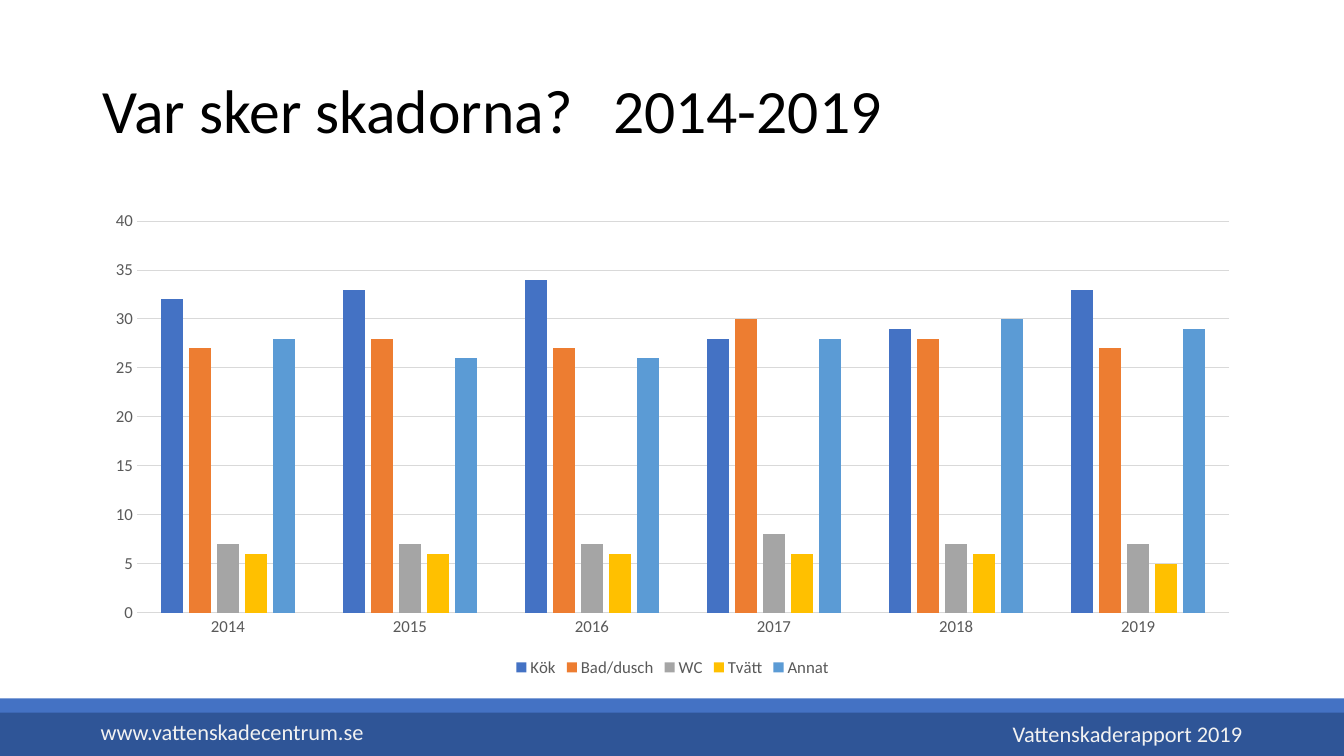
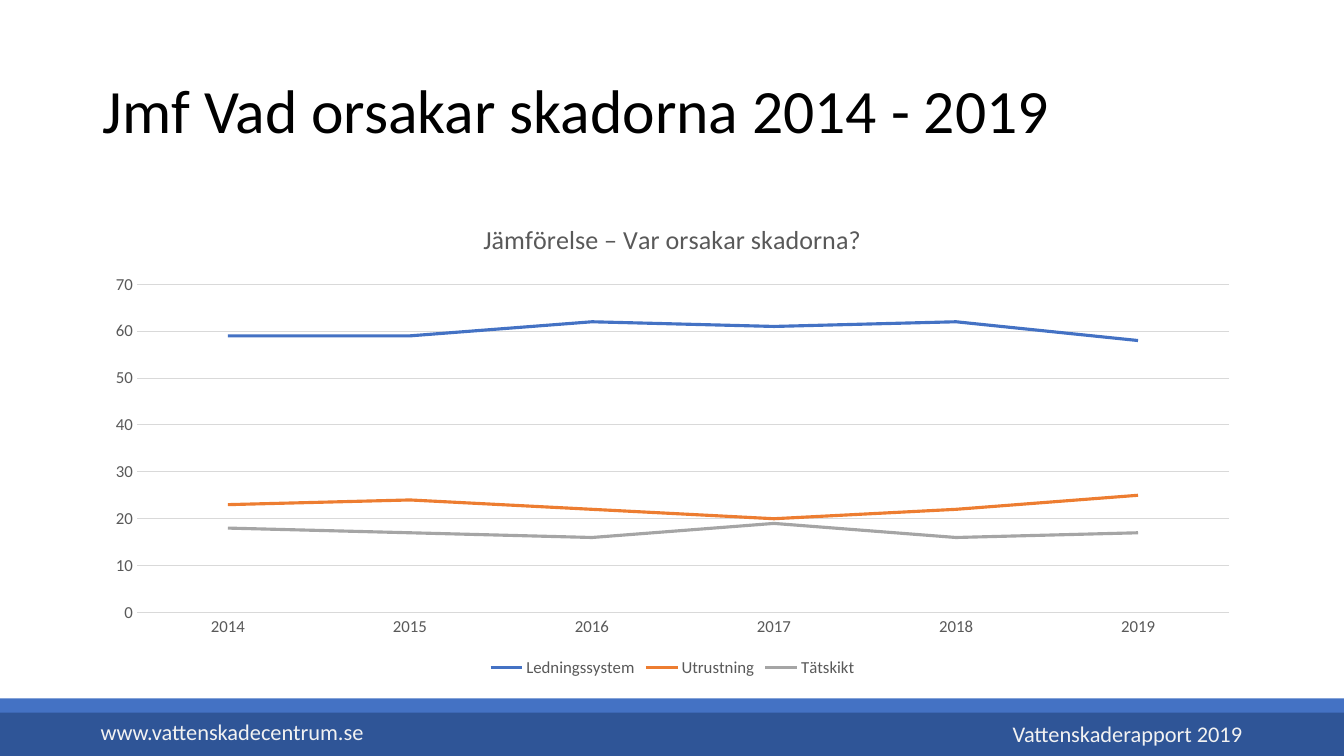
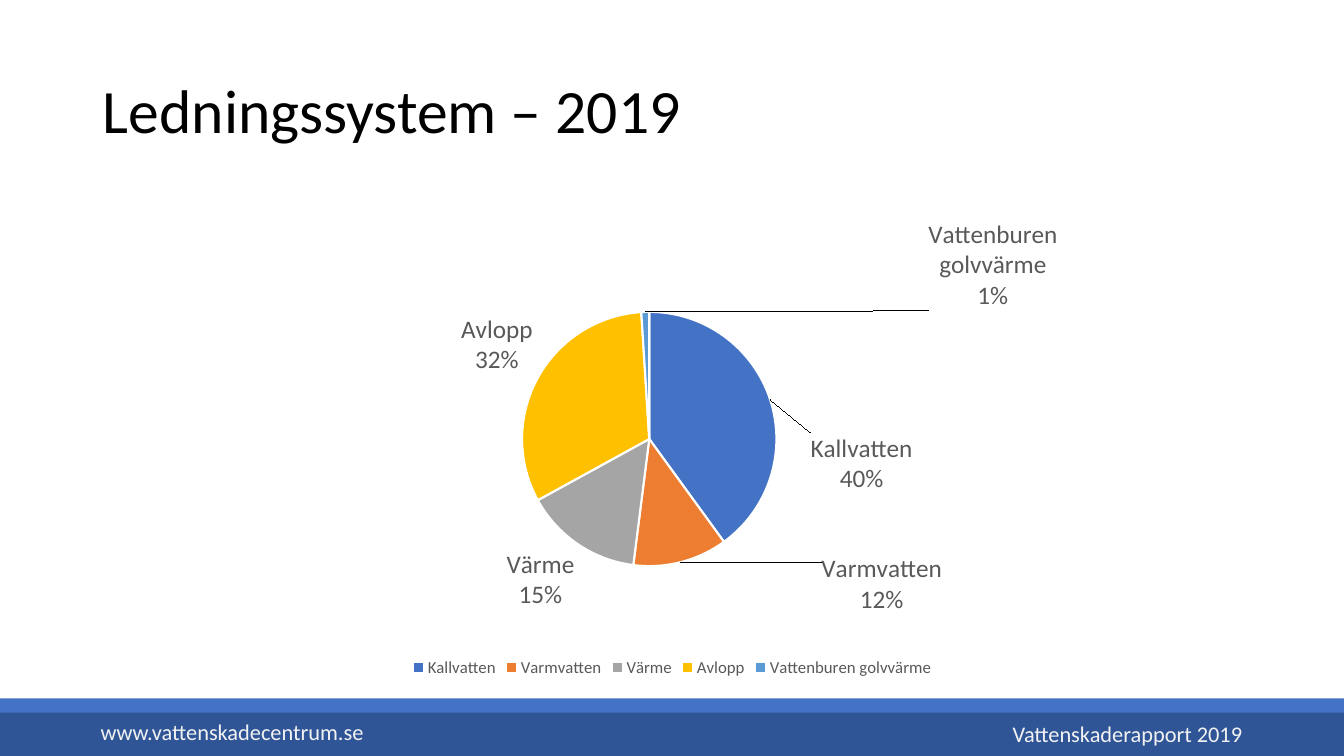
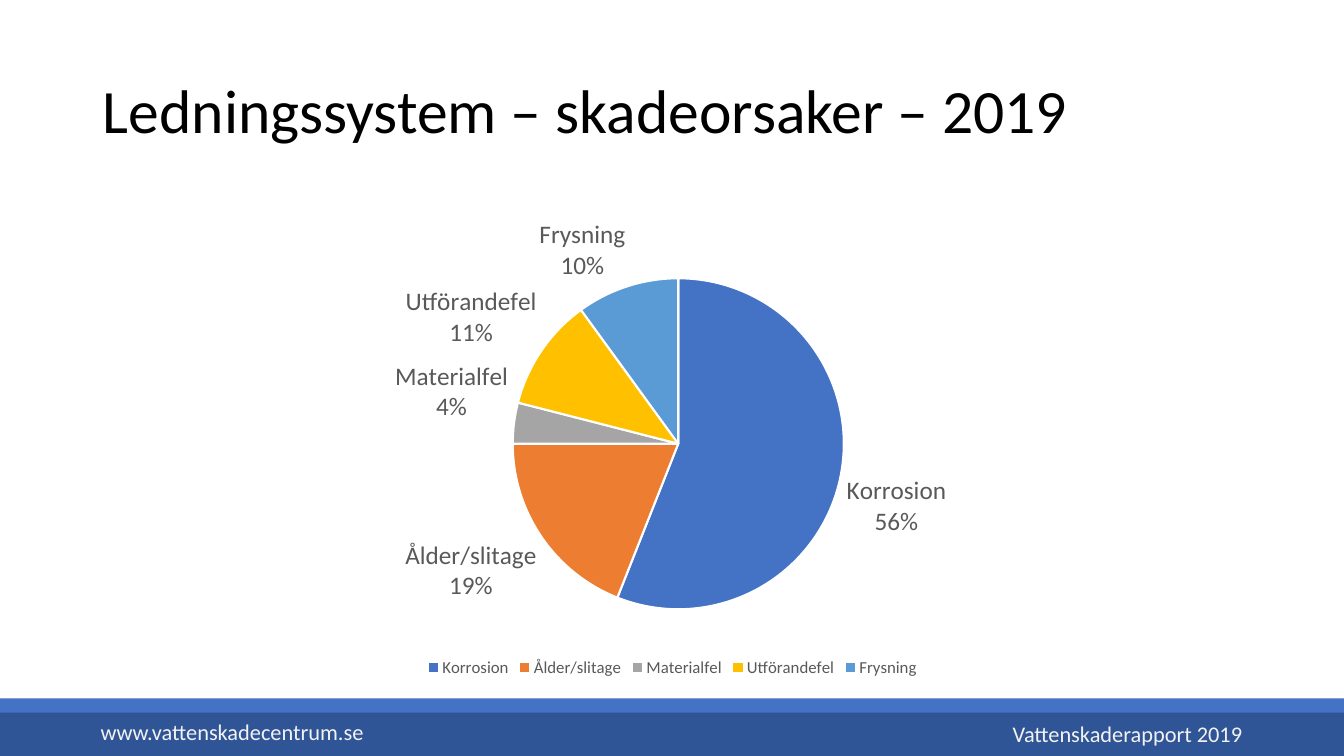
from copy import deepcopy

from lxml import etree
from pptx import Presentation
from pptx.chart.data import CategoryChartData
from pptx.dml.color import RGBColor
from pptx.enum.chart import XL_CHART_TYPE as ChartType
from pptx.enum.chart import XL_LABEL_POSITION as LabelPosition
from pptx.enum.chart import XL_LEGEND_POSITION as LegendPosition
from pptx.enum.chart import XL_TICK_MARK as TickMark
from pptx.enum.shapes import MSO_SHAPE as Shape
from pptx.enum.text import MSO_ANCHOR as Anchor
from pptx.enum.text import PP_ALIGN as Align
from pptx.oxml.ns import qn
from pptx.util import Inches, Pt

NAVY = RGBColor(0x2F, 0x55, 0x97)
BLUE = RGBColor(0x44, 0x72, 0xC4)
ORANGE = RGBColor(0xED, 0x7D, 0x31)
GREY = RGBColor(0xA5, 0xA5, 0xA5)
YELLOW = RGBColor(0xFF, 0xC0, 0x00)
SKY = RGBColor(0x5B, 0x9B, 0xD5)
BLACK = RGBColor(0, 0, 0)
WHITE = RGBColor(0xFF, 0xFF, 0xFF)
OFF_WHITE = RGBColor(0xF2, 0xF2, 0xF2)
TEXT_GREY = RGBColor(0x59, 0x59, 0x59)
GRID_GREY = RGBColor(0xD9, 0xD9, 0xD9)
PALETTE = [BLUE, ORANGE, GREY, YELLOW, SKY]

FONT = "Calibri"
WIDTH, HEIGHT = 13.33, 7.5
TITLE_BOX = (0.92, 0.4, 10.38, 1.45)
CHART_BOX = (0.92, 2, 11.5, 4.76)
TITLE_TAB = 5.06

BANDS = [((0, 7, WIDTH, 0.5), NAVY), ((0, 6.93, WIDTH, 0.14), BLUE)]
FOOTERS = [
    ("www.vattenskadecentrum.se", (0.9, 7.06, 2.83, 0.4), Align.LEFT),
    ("Vattenskaderapport 2019", (9.59, 7.08, 2.83, 0.4), Align.RIGHT),
]
YEARS = ["2014", "2015", "2016", "2017", "2018", "2019"]

# Pie plots are (x, y, width, height) and label moves (dx, dy), as shares of the chart.
SLIDES = [
    {
        "title": "Var sker skadorna?\t2014-2019",
        "type": ChartType.COLUMN_CLUSTERED,
        "categories": YEARS,
        "series": {
            "Kök": [32, 33, 34, 28, 29, 33],
            "Bad/dusch": [27, 28, 27, 30, 28, 27],
            "WC": [7, 7, 7, 8, 7, 7],
            "Tvätt": [6, 6, 6, 6, 6, 5],
            "Annat": [28, 26, 26, 28, 30, 29],
        },
    },
    {
        "title": "Jmf Vad orsakar skadorna 2014 - 2019",
        "type": ChartType.LINE,
        "chart_title": "Jämförelse – Var orsakar skadorna?",
        "categories": YEARS,
        "series": {
            "Ledningssystem": [59, 59, 62, 61, 62, 58],
            "Utrustning": [23, 24, 22, 20, 22, 25],
            "Tätskikt": [18, 17, 16, 19, 16, 17],
        },
    },
    {
        "title": "Ledningssystem – 2019",
        "type": ChartType.PIE,
        "categories": ["Kallvatten", "Varmvatten", "Värme", "Avlopp",
                       "Vattenburen golvvärme"],
        "series": {"Series 1": [40, 12, 15, 32, 1]},
        "plot": (0.37, 0.23, 0.22, 0.53),
        "label_moves": {0: (0.03, 0.2), 1: (0.12, -0.03), 4: (0.3, 0.01)},
    },
    {
        "title": "Ledningssystem – skadeorsaker – 2019",
        "type": ChartType.PIE,
        "categories": ["Korrosion", "Ålder/slitage", "Materialfel",
                       "Utförandefel", "Frysning"],
        "series": {"Series 1": [56, 19, 4, 11, 10]},
        "plot": (0.36, 0.16, 0.29, 0.69),
        "label_moves": {},
    },
]


def inches(box):
    return [Inches(value) for value in box]


def set_font(font, size, color):
    for name, value in {"name": FONT, "size": Pt(size)}.items():
        setattr(font, name, value)
    font.color.rgb = color


def manual_layout(values):
    """Return a c:layout element; values maps child tags to their val."""
    layout = etree.Element(qn("c:layout"))
    manual = etree.SubElement(layout, qn("c:manualLayout"))
    for tag, value in values.items():
        etree.SubElement(manual, qn("c:" + tag)).set("val", str(value))
    return layout


def add_shared_parts(slide, layout):
    """Draw bands and footers and move them to the layout."""
    shapes = []
    for box, color in BANDS:
        band = slide.shapes.add_shape(Shape.RECTANGLE, *inches(box))
        band.shadow.inherit = False
        band.fill.solid()
        band.fill.fore_color.rgb = color
        band.line.fill.background()
        shapes.append(band)
    for text, box, align in FOOTERS:
        footer = slide.shapes.add_textbox(*inches(box))
        frame = footer.text_frame
        frame.word_wrap = True
        frame.vertical_anchor = Anchor.MIDDLE
        frame.text = text
        paragraph = frame.paragraphs[0]
        paragraph.alignment = align
        set_font(paragraph.runs[0].font, 16, OFF_WHITE)
        shapes.append(footer)
    for shape in shapes:
        layout.shapes._spTree.append(shape._element)


def write_title(title, text):
    for name, value in zip(("left", "top", "width", "height"), inches(TITLE_BOX)):
        setattr(title, name, value)
    title.text_frame.text = text
    title.text_frame.vertical_anchor = Anchor.MIDDLE
    paragraph = title.text_frame.paragraphs[0]
    paragraph.alignment = Align.LEFT
    paragraph.line_spacing = 0.9
    if "\t" in text:
        tabs = etree.SubElement(paragraph._p.get_or_add_pPr(), qn("a:tabLst"))
        etree.SubElement(tabs, qn("a:tab"), pos=str(Inches(TITLE_TAB)), algn="l")
    for run in paragraph.runs:
        set_font(run.font, 44, BLACK)


def format_axes(chart):
    for axis in (chart.category_axis, chart.value_axis):
        axis.major_tick_mark = axis.minor_tick_mark = TickMark.NONE
        set_font(axis.tick_labels.font, 12, TEXT_GREY)
    chart.value_axis.format.line.fill.background()
    chart.value_axis.has_major_gridlines = True
    gridlines = chart.value_axis.major_gridlines
    for line in (chart.category_axis.format.line, gridlines.format.line):
        line.color.rgb = GRID_GREY
        line.width = Pt(0.75)


def format_columns(chart):
    plot = chart.plots[0]
    plot.gap_width, plot.overlap = 219, -27
    for series, color in zip(plot.series, PALETTE):
        series.format.fill.solid()
        series.format.fill.fore_color.rgb = color


def format_lines(chart):
    for series, color in zip(chart.plots[0].series, PALETTE):
        series.smooth = False
        series.format.line.color.rgb = color
        series.format.line.width = Pt(2.25)


def format_pie(chart, content):
    series = chart.plots[0].series[0]
    for index, color in enumerate(PALETTE):
        point = series.points[index]
        point.format.fill.solid()
        point.format.fill.fore_color.rgb = color
        point.format.line.color.rgb = WHITE
        point.format.line.width = Pt(1.5)

    labels = series.data_labels
    label_format = {
        "show_value": False, "show_category_name": True, "show_percentage": True,
        "number_format": "0%", "number_format_is_linked": False,
        "position": LabelPosition.OUTSIDE_END,
    }
    for name, value in label_format.items():
        setattr(labels, name, value)
    set_font(labels.font, 18, TEXT_GREY)
    group = labels._element
    for leader in group.findall(qn("c:showLeaderLines")):
        group.remove(leader)
    etree.SubElement(group, qn("c:separator")).text = "\n"

    shared = list(group)
    for position, (index, (dx, dy)) in enumerate(content["label_moves"].items()):
        label = etree.Element(qn("c:dLbl"))
        etree.SubElement(label, qn("c:idx")).set("val", str(index))
        label.append(manual_layout({"x": dx, "y": dy}))
        label.extend(deepcopy(shared))
        group.insert(position, label)

    plot_area = chart._chartSpace.chart.plotArea
    for old in plot_area.findall(qn("c:layout")):
        plot_area.remove(old)
    x, y, width, height = content["plot"]
    plot_area.insert(0, manual_layout({
        "layoutTarget": "inner", "xMode": "edge", "yMode": "edge",
        "x": x, "y": y, "w": width, "h": height,
    }))


def add_chart(slide, content):
    data = CategoryChartData()
    data.categories = content["categories"]
    for name, values in content["series"].items():
        data.add_series(name, values)
    chart = slide.shapes.add_chart(content["type"], *inches(CHART_BOX), data).chart
    set_font(chart.font, 10, BLACK)
    chart.has_legend = True
    chart.legend.position = LegendPosition.BOTTOM
    chart.legend.include_in_layout = False
    set_font(chart.legend.font, 12, TEXT_GREY)

    chart.has_title = "chart_title" in content
    if chart.has_title:
        frame = chart.chart_title.text_frame
        frame.text = content["chart_title"]
        font = frame.paragraphs[0].runs[0].font
        set_font(font, 18.6, TEXT_GREY)
        font.bold = False

    if content["type"] == ChartType.PIE:
        format_pie(chart, content)
        return
    chart.plots[0].vary_by_categories = False
    format_axes(chart)
    if content["type"] == ChartType.LINE:
        format_lines(chart)
    else:
        format_columns(chart)


def main():
    presentation = Presentation()
    presentation.slide_width = Inches(WIDTH)
    presentation.slide_height = Inches(HEIGHT)
    layout = presentation.slide_layouts.get_by_name("Title Only")
    for number, content in enumerate(SLIDES):
        slide = presentation.slides.add_slide(layout)
        if number == 0:
            add_shared_parts(slide, layout)
        write_title(slide.shapes.title, content["title"])
        add_chart(slide, content)
    presentation.save("out.pptx")


if __name__ == "__main__":
    main()
